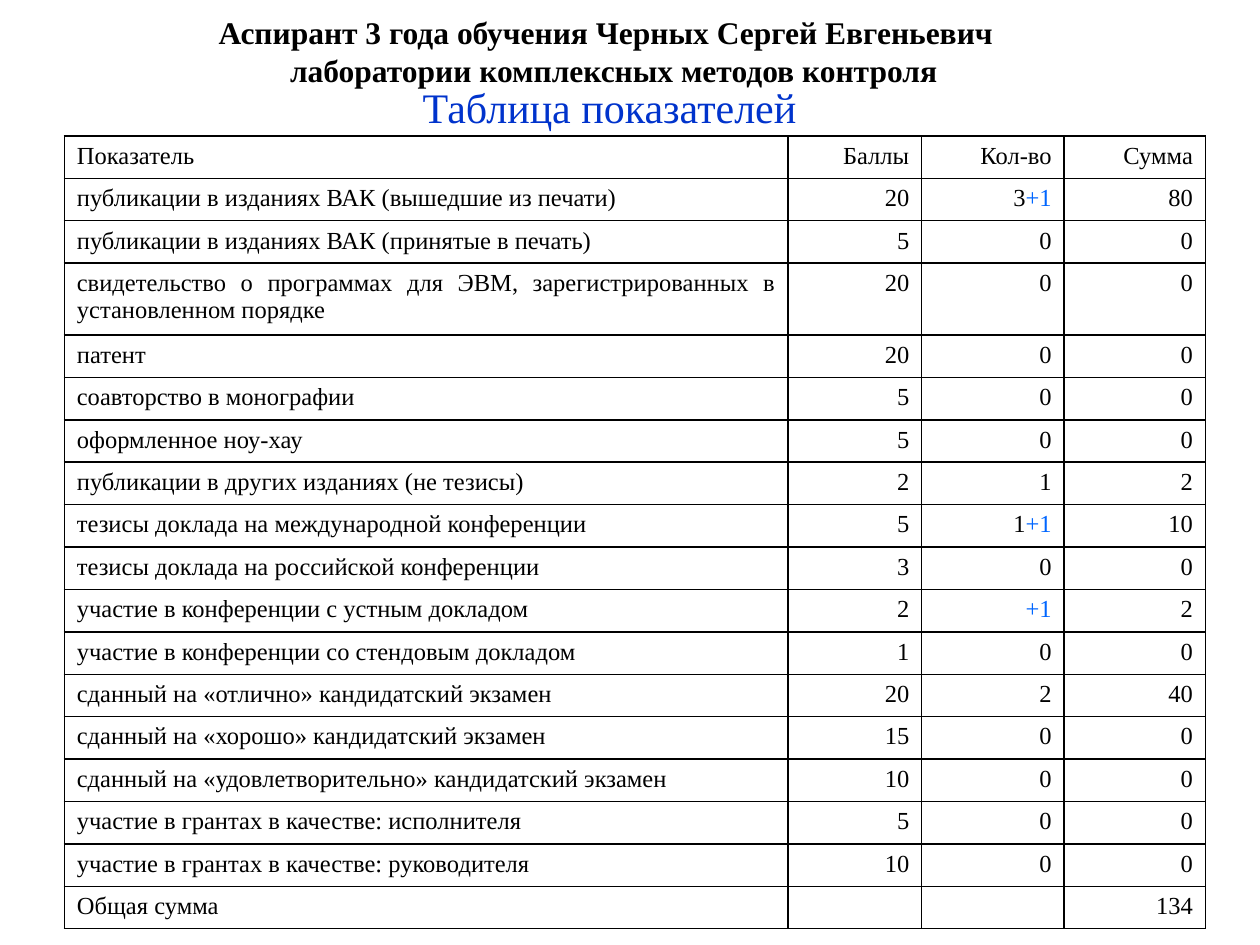
from lxml import etree
from pptx import Presentation
from pptx import util as u
from pptx.dml import color
from pptx.enum import text
from pptx.oxml import ns

COLORS = {
    "ink": "000000",
    "title": "0033CC",
    "addition": "0066FF",
    "paper": "FFFFFF",
}
FONT = "Times New Roman"
CELL_SIZE = 14
LONG_ROW = 3
LONG_ROW_HEIGHT = 1.44
COLUMN_SHARES = (5.74, 1.06, 1.13, 1.12)

INDICATORS = [
    ("Показатель", "Баллы", "Кол-во", "Сумма"),
    ("публикации в изданиях ВАК (вышедшие из печати)", "20", "3+1", "80"),
    ("публикации в изданиях ВАК (принятые в печать)", "5", "0", "0"),
    ("свидетельство о программах для ЭВМ, зарегистрированных в установленном порядке", "20", "0", "0"),
    ("патент", "20", "0", "0"),
    ("соавторство в монографии", "5", "0", "0"),
    ("оформленное ноу-хау", "5", "0", "0"),
    ("публикации в других изданиях (не тезисы)", "2", "1", "2"),
    ("тезисы доклада на международной конференции", "5", "1+1", "10"),
    ("тезисы доклада на российской конференции", "3", "0", "0"),
    ("участие в конференции с устным докладом", "2", "+1", "2"),
    ("участие в конференции со стендовым докладом", "1", "0", "0"),
    ("сданный на «отлично» кандидатский экзамен", "20", "2", "40"),
    ("сданный на «хорошо» кандидатский экзамен", "15", "0", "0"),
    ("сданный на «удовлетворительно» кандидатский экзамен", "10", "0", "0"),
    ("участие в грантах в качестве: исполнителя", "5", "0", "0"),
    ("участие в грантах в качестве: руководителя", "10", "0", "0"),
    ("Общая сумма", "", "", "134"),
]


def add_run(paragraph, words, size, tint, bold=False):
    run = paragraph.add_run()
    run.text = words
    run.font.name = FONT
    run.font.size = u.Pt(size)
    run.font.bold = bold
    run.font.color.rgb = color.RGBColor.from_string(COLORS[tint])


def add_centred_box(slide, box, anchor):
    frame = slide.shapes.add_textbox(*(u.Cm(side) for side in box)).text_frame
    frame.word_wrap = True
    frame.vertical_anchor = anchor
    paragraph = frame.paragraphs[0]
    paragraph.alignment = text.PP_ALIGN.CENTER
    return paragraph


def add_student(slide, box):
    student = add_centred_box(slide, box, text.MSO_ANCHOR.MIDDLE)
    add_run(student, "Аспирант 3 года обучения Черных Сергей Евгеньевич ", 18, "ink", True)
    student.add_line_break()
    add_run(student, " лаборатории комплексных методов контроля", 18, "ink", True)


def add_title(slide, box):
    title = add_centred_box(slide, box, text.MSO_ANCHOR.TOP)
    title.space_before = u.Pt(2)
    add_run(title, "Таблица показателей", 24, "title")


def add_borders(cell):
    properties = cell._tc.get_or_add_tcPr()
    for side in ("lnL", "lnR", "lnT", "lnB"):
        line = etree.SubElement(properties, ns.qn(f"a:{side}"), w=str(u.Pt(1)))
        fill = etree.SubElement(line, ns.qn("a:solidFill"))
        etree.SubElement(fill, ns.qn("a:srgbClr"), val=COLORS["ink"])


def fill_cell(cell, words, alignment):
    add_borders(cell)
    cell.fill.solid()
    cell.fill.fore_color.rgb = color.RGBColor.from_string(COLORS["paper"])
    cell.margin_left = cell.margin_right = u.Cm(0.25)
    cell.margin_top = cell.margin_bottom = u.Cm(0.13)
    paragraph = cell.text_frame.paragraphs[0]
    paragraph.alignment = alignment
    base, plus, extra = words.partition("+")
    if base:
        add_run(paragraph, base, CELL_SIZE, "ink")
    if plus:
        add_run(paragraph, plus + extra, CELL_SIZE, "addition")
    if not words:
        etree.SubElement(paragraph._p, ns.qn("a:endParaRPr"), sz=str(CELL_SIZE * 100))


def add_indicators(slide, box):
    left, top, width, height = box
    table = slide.shapes.add_table(
        len(INDICATORS), len(COLUMN_SHARES), *(u.Cm(side) for side in box)
    ).table
    table.first_row = table.horz_banding = False
    for column, share in zip(table.columns, COLUMN_SHARES):
        column.width = u.Cm(width * share / sum(COLUMN_SHARES))
    row_height = (height - LONG_ROW_HEIGHT) / (len(INDICATORS) - 1)
    for r, indicator in enumerate(INDICATORS):
        table.rows[r].height = u.Cm(LONG_ROW_HEIGHT if r == LONG_ROW else row_height)
        for c, words in enumerate(indicator):
            alignment = text.PP_ALIGN.RIGHT if c else text.PP_ALIGN.JUSTIFY
            fill_cell(table.cell(r, c), words, alignment)


def main():
    deck = Presentation()
    deck.slide_width, deck.slide_height = u.Cm(25.4), u.Cm(19.05)
    slide = deck.slides.add_slide(deck.slide_layouts[6])
    add_title(slide, (3.4, 1.52, 17.78, 1.19))
    add_indicators(slide, (1.3, 2.74, 23, 15.98))
    add_student(slide, (1.5, 0.13, 21.59, 1.8))
    deck.save("out.pptx")


if __name__ == "__main__":
    main()
